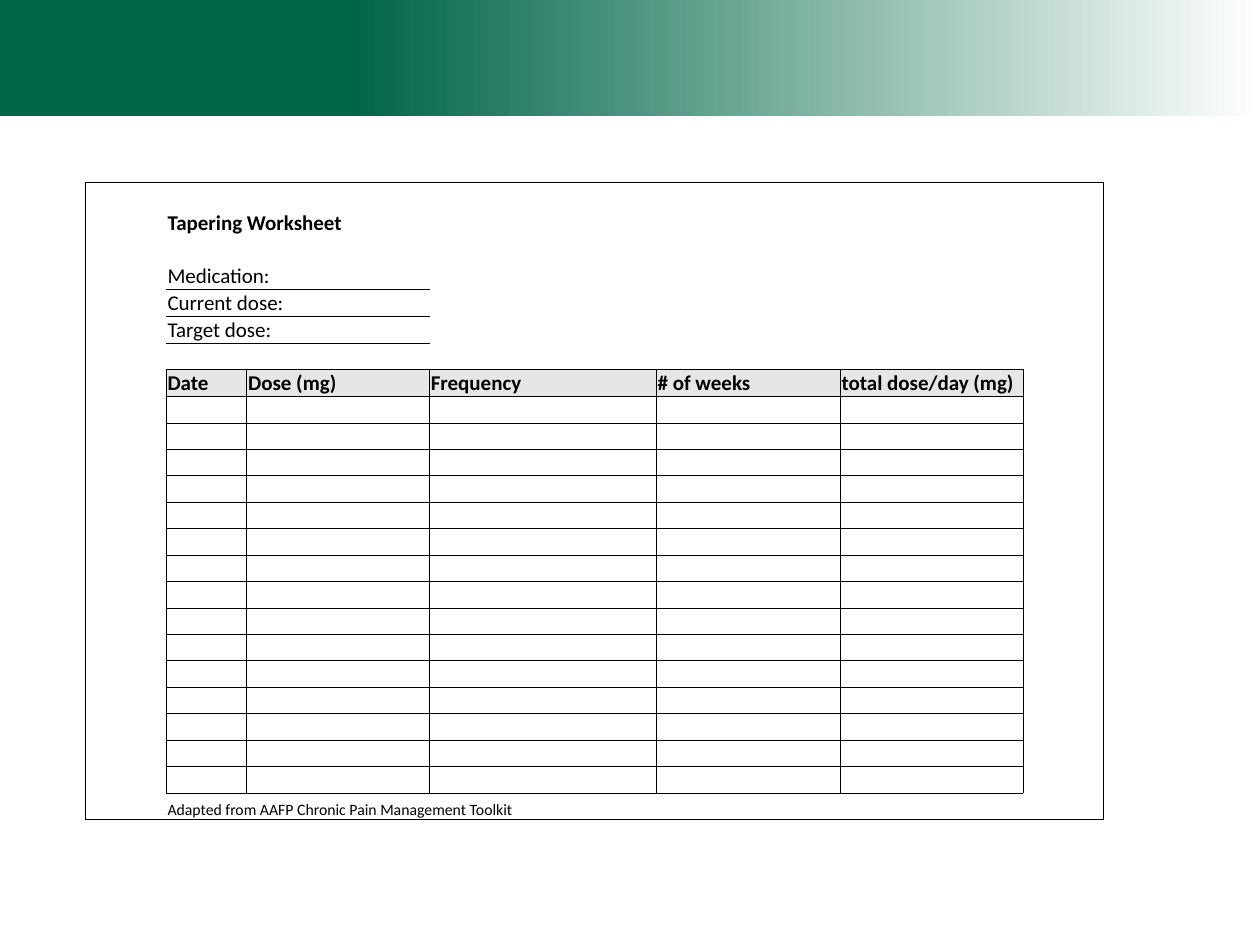
import pptx
import pptx.util
import pptx.dml.color
import pptx.enum.shapes
import pptx.enum.text
import pptx.oxml.ns
import lxml.etree

Inches, Pt = pptx.util.Inches, pptx.util.Pt

# Content: (row, first column, last column, text, size, bold)
LABELS = [
    (1, 1, 2, "Tapering Worksheet", 12, True),
    (3, 1, 2, "Medication:", 12, False),
    (4, 1, 2, "Current dose:", 12, False),
    (5, 1, 2, "Target dose:", 12, False),
    (23, 1, 3, "Adapted from AAFP Chronic Pain Management Toolkit", 9, False),
]
HEADINGS = ["Date", "Dose (mg)", "Frequency", "# of weeks", "total dose/day (mg)"]

COLORS = {"green": "006648", "white": "FFFFFF", "black": "000000", "header": "E7E6E6"}
FONT = "Calibri"
COLUMN_WIDTHS = [0.64, 0.64, 1.45, 1.8, 1.46, 1.45, 0.64, 0.64]
ROW_COUNT, ROW_HEIGHT = 25, 0.21
HEADER_ROW, FOOTER_ROW = 7, 23
FRAME_BOTTOM, FRAME_RIGHT = 24, 7
FRAME_WIDTH, GRID_WIDTH = 1, 0.5


def rgb(name):
    return pptx.dml.color.RGBColor.from_string(COLORS[name])


def horizontal_width(line, column):
    """Width of the rule above row number `line`; 0 means no rule."""
    if line in (0, FRAME_BOTTOM) and column < FRAME_RIGHT:
        return FRAME_WIDTH
    if 4 <= line <= 6 and column in (1, 2):
        return GRID_WIDTH
    if HEADER_ROW <= line <= FOOTER_ROW and 1 <= column <= 5:
        return GRID_WIDTH
    return 0


def vertical_width(line, row):
    """Width of the rule left of column number `line`; 0 means no rule."""
    if line in (0, FRAME_RIGHT) and row < FRAME_BOTTOM:
        return FRAME_WIDTH
    if 1 <= line <= 6 and HEADER_ROW <= row < FOOTER_ROW:
        return GRID_WIDTH
    return 0


def add_border(cell, side, width):
    properties = cell._tc.get_or_add_tcPr()
    line = lxml.etree.SubElement(properties, pptx.oxml.ns.qn("a:ln" + side))
    if not width:
        lxml.etree.SubElement(line, pptx.oxml.ns.qn("a:noFill"))
        return
    line.set("w", str(Pt(width)))
    fill = lxml.etree.SubElement(line, pptx.oxml.ns.qn("a:solidFill"))
    color = lxml.etree.SubElement(fill, pptx.oxml.ns.qn("a:srgbClr"))
    color.set("val", COLORS["black"])


def format_cell(cell, row, column):
    cell.margin_left = cell.margin_right = cell.margin_top = Inches(0.01)
    cell.margin_bottom = 0
    cell.vertical_anchor = pptx.enum.text.MSO_ANCHOR.BOTTOM
    add_border(cell, "L", vertical_width(column, row))
    add_border(cell, "R", vertical_width(column + 1, row))
    add_border(cell, "T", horizontal_width(row, column))
    add_border(cell, "B", horizontal_width(row + 1, column))
    if row == HEADER_ROW and 1 <= column <= len(HEADINGS):
        cell.fill.solid()
        cell.fill.fore_color.rgb = rgb("header")
    else:
        cell.fill.background()
    # A small end-of-paragraph size keeps empty rows at their set height
    paragraph = cell.text_frame.paragraphs[0]
    end = lxml.etree.SubElement(paragraph._p, pptx.oxml.ns.qn("a:endParaRPr"))
    end.set("sz", "900")


def write_cell(cell, text, size, bold):
    paragraph = cell.text_frame.paragraphs[0]
    paragraph.text = text
    font = paragraph.runs[0].font
    font.name, font.size, font.bold = FONT, Pt(size), bold
    font.color.rgb = rgb("black")


def add_banner(slide):
    banner = slide.shapes.add_shape(
        pptx.enum.shapes.MSO_SHAPE.RECTANGLE, 0, 0, Inches(10), Inches(0.92))
    banner.shadow.inherit = False
    banner.line.fill.background()
    banner.fill.gradient()
    banner.fill.gradient_angle = 0
    stops = [(0.28, "green"), (1, "white")]
    for stop, (position, color) in zip(banner.fill.gradient_stops, stops):
        stop.position = position
        stop.color.rgb = rgb(color)


def add_worksheet(slide):
    table = slide.shapes.add_table(
        ROW_COUNT, len(COLUMN_WIDTHS), Inches(0.68), Inches(1.45),
        Inches(sum(COLUMN_WIDTHS)), Inches(ROW_COUNT * ROW_HEIGHT)).table
    table.first_row = table.horz_banding = False
    for column, width in zip(table.columns, COLUMN_WIDTHS):
        column.width = Inches(width)
    for row_index, row in enumerate(table.rows):
        row.height = Inches(ROW_HEIGHT)
        for column_index, cell in enumerate(row.cells):
            format_cell(cell, row_index, column_index)
    for row_index, first, last, text, size, bold in LABELS:
        cell = table.cell(row_index, first)
        cell.merge(table.cell(row_index, last))
        write_cell(cell, text, size, bold)
    for column_index, heading in enumerate(HEADINGS, start=1):
        write_cell(table.cell(HEADER_ROW, column_index), heading, 12, True)


def main():
    presentation = pptx.Presentation()
    presentation.slide_width, presentation.slide_height = Inches(10), Inches(7.5)
    slide = presentation.slides.add_slide(presentation.slide_layouts[6])
    add_banner(slide)
    add_worksheet(slide)
    presentation.save("out.pptx")


if __name__ == "__main__":
    main()
